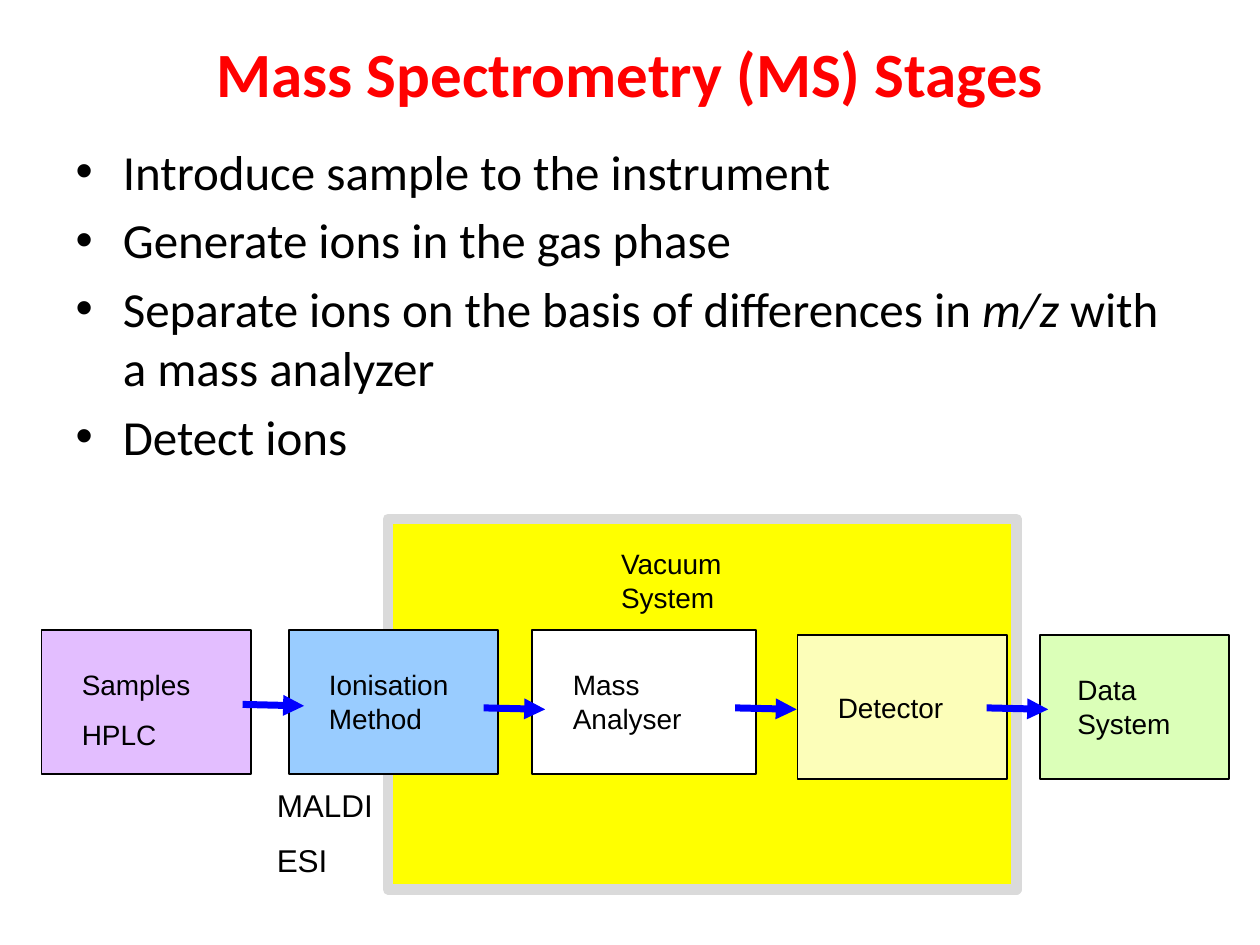
from lxml import etree
from pptx import Presentation
from pptx import util as u
from pptx.dml.color import RGBColor
from pptx.enum import shapes, text
from pptx.oxml.ns import qn

RED = RGBColor(0xFF, 0x00, 0x00)
BLACK = RGBColor(0x00, 0x00, 0x00)
WHITE = RGBColor(0xFF, 0xFF, 0xFF)
BLUE = RGBColor(0x00, 0x00, 0xFF)
YELLOW = RGBColor(0xFF, 0xFF, 0x00)
GREY = RGBColor(0xDA, 0xDA, 0xDA)
LILAC = RGBColor(0xE3, 0xBE, 0xFF)
SKY = RGBColor(0x99, 0xCC, 0xFF)
CREAM = RGBColor(0xFC, 0xFE, 0xB9)
LIME = RGBColor(0xDB, 0xFF, 0xB8)

HEAD = {"name": "Calibri", "size": u.Pt(36), "bold": True}
BODY = {"name": "Calibri", "size": u.Pt(28)}
LABEL = {"name": "Arial", "size": u.Pt(16)}
NOTE = {"name": "Arial", "size": u.Pt(18)}

# Each point is a list of (words, italic) runs
POINTS = [
    [("Introduce sample to the instrument", False)],
    [("Generate ions in the gas phase", False)],
    [("Separate ions on the basis of differences in ", False),
     ("m/z", True), (" with a mass analyzer", False)],
    [("Detect ions", False)],
]

# Box left, top, width; label inset left, top, width; fill; lines
STAGES = [
    (0.84, 12.7, 4.22, 0.56, 0.64, 3.12, LILAC, ["Samples", "HPLC"]),
    (5.82, 12.7, 4.22, 0.56, 0.64, 3.12, SKY, ["Ionisation Method"]),
    (10.72, 12.7, 4.52, 0.58, 0.64, 3.33, WHITE, ["Mass Analyser"]),
    (16.08, 12.8, 4.22, 0.56, 0.99, 3.12, CREAM, ["Detector"]),
    (20.96, 12.8, 3.81, 0.51, 0.64, 2.82, LIME, ["Data System"]),
]
STAGE_H = 2.9

# Start of each arrow
ARROWS = [(4.89, 14.2), (9.75, 14.27), (14.82, 14.27), (19.89, 14.27)]


def style(font, form, color=BLACK):
    for key, val in form.items():
        setattr(font, key, val)
    font.color.rgb = color


def place(shape, *box):
    for key, val in zip(("left", "top", "width", "height"), box):
        setattr(shape, key, u.Cm(val))


def add_rect(slide, box, fill, line, width):
    rect = slide.shapes.add_shape(shapes.MSO_SHAPE.RECTANGLE, *map(u.Cm, box))
    rect.shadow.inherit = False
    rect.fill.solid()
    rect.fill.fore_color.rgb = fill
    rect.line.color.rgb = line
    rect.line.width = u.Pt(width)


def add_label(slide, box, lines, form, gap, fill=None):
    label = slide.shapes.add_textbox(*map(u.Cm, box))
    if fill is not None:
        label.fill.solid()
        label.fill.fore_color.rgb = fill
    frame = label.text_frame
    frame.word_wrap = True
    frame.text = "\n".join(lines)
    for para in frame.paragraphs:
        style(para.runs[0].font, form)
    for para in frame.paragraphs[1:]:
        para.space_before = u.Pt(gap)


def add_arrow(slide, left, top):
    ends = (left, top, left + 1.24, top + 0.03)
    arrow = slide.shapes.add_connector(
        shapes.MSO_CONNECTOR.STRAIGHT, *map(u.Cm, ends))
    arrow.line.color.rgb = BLUE
    arrow.line.width = u.Pt(4)
    etree.SubElement(arrow.line._get_or_add_ln(), qn("a:tailEnd"),
                     type="triangle")
    etree.SubElement(arrow._element.spPr, qn("a:effectLst"))


def add_stage(slide, left, top, width, dx, dy, wide, fill, lines):
    add_rect(slide, (left, top, width, STAGE_H), fill, BLACK, 1)
    high = {"Samples": 1.96, "Detector": 0.91}.get(lines[0], 1.6)
    add_label(slide, (left + dx, top + dy, wide, high), lines, LABEL, 9, fill)


def fill_title(slide):
    title = slide.shapes.title
    place(title, 0, 0, 25.4, 2.9)
    title.text_frame.text = "Mass Spectrometry (MS) Stages"
    para = title.text_frame.paragraphs[0]
    para.alignment = text.PP_ALIGN.CENTER
    style(para.runs[0].font, HEAD, RED)


def fill_body(slide):
    body = slide.placeholders[1]
    place(body, 1.27, 2.72, 22.83, 7.29)
    frame = body.text_frame
    frame.auto_size = text.MSO_AUTO_SIZE.NONE
    for num, point in enumerate(POINTS):
        para = frame.add_paragraph() if num else frame.paragraphs[0]
        for words, slant in point:
            run = para.add_run()
            run.text = words
            style(run.font, {**BODY, "italic": slant})


def main():
    deck = Presentation()
    deck.slide_width, deck.slide_height = u.Cm(25.4), u.Cm(19.05)
    slide = deck.slides.add_slide(deck.slide_layouts[1])
    fill_title(slide)
    fill_body(slide)

    # Vacuum chamber behind the stages
    add_rect(slide, (7.82, 10.46, 12.67, 7.47), YELLOW, GREY, 6)
    add_label(slide, (12.27, 10.9, 3.12, 1.6), ["Vacuum System"], LABEL, 9)

    # Stages and the flow between them
    for stage in STAGES:
        add_stage(slide, *stage)
    for start in ARROWS:
        add_arrow(slide, *start)

    # Ionisation methods
    add_label(slide, (5.33, 15.72, 2.95, 2.16), ["MALDI", "ESI"], NOTE, 10)
    deck.save("out.pptx")


if __name__ == "__main__":
    main()
